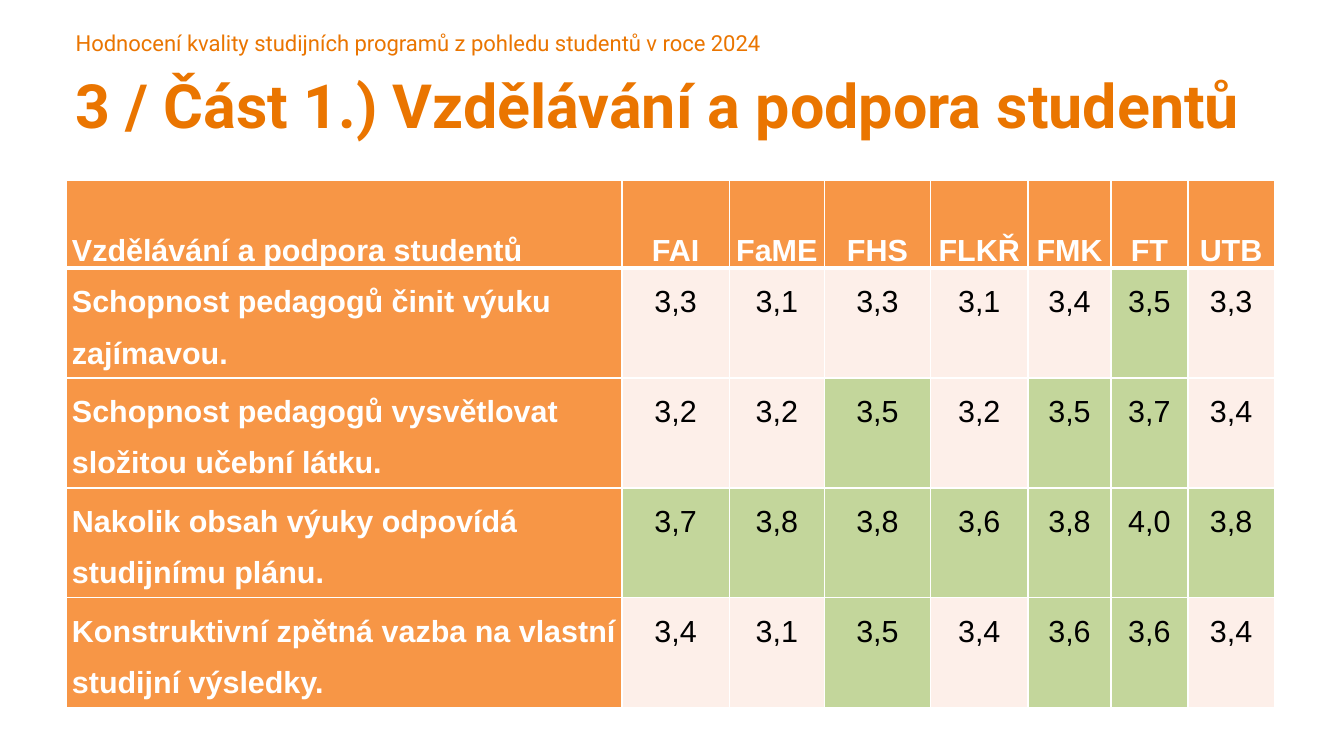
from lxml import etree
from pptx import Presentation
from pptx import util as u
from pptx.dml import color
from pptx.enum import text
from pptx.oxml import ns

ORANGE, HEADER, GREEN, PALE = "EA7500", "F79646", "C3D69B", "FDEFE9"
WHITE, BLACK = "FFFFFF", "000000"
GOOD_SCORE = 3.5

FACULTIES = ["FAI", "FaME", "FHS", "FLKŘ", "FMK", "FT", "UTB"]
RATINGS = {
    "Schopnost pedagogů činit výuku zajímavou.": [3.3, 3.1, 3.3, 3.1, 3.4, 3.5, 3.3],
    "Schopnost pedagogů vysvětlovat složitou učební látku.": [3.2, 3.2, 3.5, 3.2, 3.5, 3.7, 3.4],
    "Nakolik obsah výuky odpovídá studijnímu plánu.": [3.7, 3.8, 3.8, 3.6, 3.8, 4.0, 3.8],
    "Konstruktivní zpětná vazba na vlastní studijní výsledky.": [3.4, 3.1, 3.5, 3.4, 3.6, 3.6, 3.4],
}
COLUMN_WIDTHS = [4.56, 0.88, 0.78, 0.87, 0.8, 0.68, 0.63, 0.71]
ROW_HEIGHTS = [0.72] + [0.9] * len(RATINGS)


def rgb(value):
    return color.RGBColor.from_string(value)


def set_all(target, **values):
    for name, value in values.items():
        setattr(target, name, value)


def write(paragraph, words, size, font, tint, bold=False):
    span = paragraph.add_run()
    span.text = words
    set_all(span.font, size=u.Pt(size), name=font, bold=bold)
    span.font.color.rgb = rgb(tint)


def add_heading(page, place, words, size, bold=False):
    box = page.shapes.add_textbox(*map(u.Inches, place))
    frame = box.text_frame
    set_all(frame, word_wrap=True, auto_size=text.MSO_AUTO_SIZE.SHAPE_TO_FIT_TEXT,
            margin_left=0, margin_right=0, margin_top=0, margin_bottom=0)
    write(frame.paragraphs[0], words, size, "Roboto", ORANGE, bold)


def add_borders(cell, top, bottom):
    properties = cell._tc.get_or_add_tcPr()
    for side, width in {"L": 1, "R": 1, "T": top, "B": bottom}.items():
        line = etree.SubElement(properties, ns.qn(f"a:ln{side}"), w=str(u.Pt(width)))
        fill = etree.SubElement(line, ns.qn("a:solidFill"))
        etree.SubElement(fill, ns.qn("a:srgbClr"), val=WHITE)


def fill_cell(cell, words, fill, is_header, is_label, top):
    add_borders(cell, top, 3 if is_header else 1)
    cell.fill.solid()
    cell.fill.fore_color.rgb = rgb(fill)
    anchor = text.MSO_ANCHOR.BOTTOM if is_header else text.MSO_ANCHOR.TOP
    set_all(cell, vertical_anchor=anchor, margin_top=0, margin_bottom=0,
            margin_left=u.Inches(0.05), margin_right=u.Inches(0.05))
    paragraph = cell.text_frame.paragraphs[0]
    align = text.PP_ALIGN.LEFT if is_label else text.PP_ALIGN.CENTER
    set_all(paragraph, line_spacing=1.5, alignment=align)
    strong = is_header or is_label
    write(paragraph, words, 18, "Arial", WHITE if strong else BLACK, strong)


def add_ratings(page, left, top):
    rows = [["Vzdělávání a podpora studentů", *FACULTIES]]
    rows += [[question, *scores] for question, scores in RATINGS.items()]
    size = (sum(COLUMN_WIDTHS), sum(ROW_HEIGHTS))
    table = page.shapes.add_table(len(rows), len(COLUMN_WIDTHS),
                                  *map(u.Inches, (left, top, *size))).table
    for column, width in zip(table.columns, COLUMN_WIDTHS):
        column.width = u.Inches(width)
    for row, height in zip(table.rows, ROW_HEIGHTS):
        row.height = u.Inches(height)

    # Scores from GOOD_SCORE up are green, lower ones pale
    for r, values in enumerate(rows):
        for c, value in enumerate(values):
            words, fill = value, HEADER
            if isinstance(value, float):
                words = f"{value:.1f}".replace(".", ",")
                fill = GREEN if value >= GOOD_SCORE else PALE
            fill_cell(table.cell(r, c), words, fill, r == 0, c == 0, 3 if r == 1 else 1)


def main():
    deck = Presentation()
    set_all(deck, slide_width=u.Inches(11.02), slide_height=u.Inches(6.2))
    page = deck.slides.add_slide(deck.slide_layouts[6])

    # Headings
    add_heading(page, (0.62, 0.24, 9.92, 0.22),
                "Hodnocení kvality studijních programů z pohledu studentů v roce 2024", 13)
    add_heading(page, (0.62, 0.55, 10.18, 0.61),
                "3 / Část 1.) Vzdělávání a podpora studentů", 36, bold=True)

    # Ratings by faculty
    add_ratings(page, 0.54, 1.48)
    deck.save("out.pptx")


if __name__ == "__main__":
    main()
